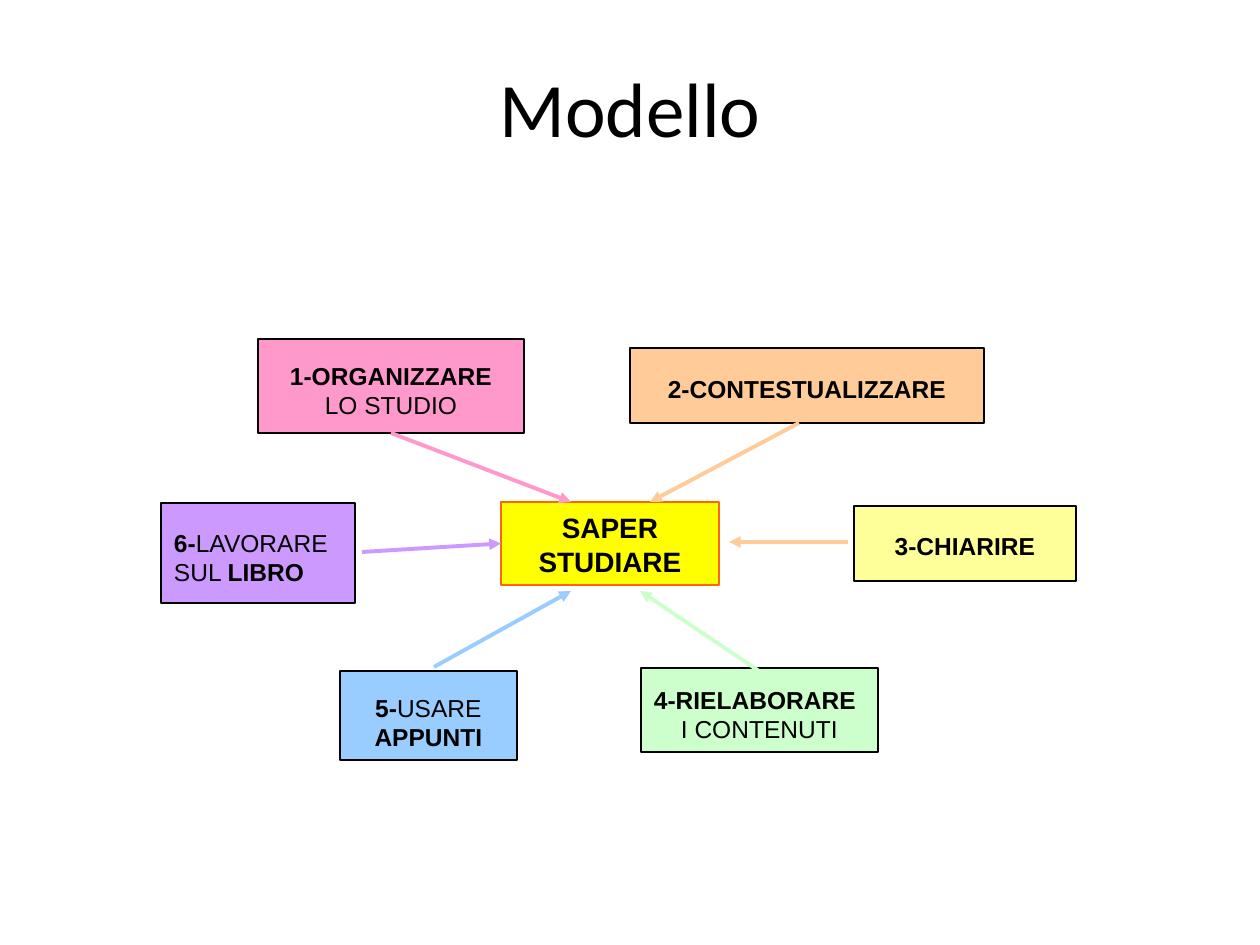
"""Build the "Modello" slide: six study skills pointing at one central goal."""
from lxml import etree
from pptx import Presentation
from pptx.dml.color import RGBColor
from pptx.enum.shapes import MSO_CONNECTOR, MSO_SHAPE
from pptx.enum.text import MSO_ANCHOR, PP_ALIGN
from pptx.oxml.ns import qn
from pptx.util import Pt

PX = 914400 // 126
STRAIGHT, RECTANGLE = MSO_CONNECTOR.STRAIGHT, MSO_SHAPE.RECTANGLE
TOP, MIDDLE = MSO_ANCHOR.TOP, MSO_ANCHOR.MIDDLE
LEFT, CENTER = PP_ALIGN.LEFT, PP_ALIGN.CENTER
BLACK = "000000"
SIDE_INSET, EDGE_INSET = 13, 6
BOTTOM_SIDE, LEFT_SIDE = 2, 1

# Each paragraph is (alignment, [(text, bold), ...]).
TITLE = [(CENTER, [("Modello", False)])]
TITLE_FRAME = (63, 38, 1134, 137)
GOAL = [(CENTER, [("SAPER", True)]), (CENTER, [("STUDIARE", True)])]
GOAL_FRAME = (501, 502, 218, 83)
SKILLS = [
    {"frame": (258, 339, 266, 94), "fill": "FF99CC", "inset": 22,
     "text": [(CENTER, [("1-ORGANIZZARE", True)]), (CENTER, [("LO STUDIO", False)])],
     "arrow": ("FF99CC", (392, 433), (571, 502))},
    {"frame": (630, 348, 354, 75), "fill": "FFCC99", "inset": 26,
     "text": [(CENTER, [("2-CONTESTUALIZZARE", True)])],
     "arrow": ("FFCC99", (799, 423), (650, 502))},
    {"frame": (854, 506, 222, 75), "fill": "FFFF99", "inset": 25,
     "text": [(CENTER, [("3-CHIARIRE", True)])],
     "arrow": ("FFCC99", (848, 542), (729, 542))},
    {"frame": (641, 668, 237, 84), "fill": "CCFFCC", "inset": 17,
     "text": [(LEFT, [("4-RIELABORARE", True)]), (CENTER, [("I CONTENUTI", False)])],
     "arrow": ("CCFFCC", (759, 671), (640, 591))},
    {"frame": (340, 671, 177, 89), "fill": "99CCFF", "inset": 22,
     "text": [(CENTER, [("5-", True), ("USARE", False)]), (CENTER, [("APPUNTI", True)])],
     "arrow": ("99CCFF", (434, 667), (571, 591))},
    {"frame": (161, 503, 194, 100), "fill": "CC99FF", "inset": 25,
     "text": [(LEFT, [("6-", True), ("LAVORARE SUL ", False), ("LIBRO", True)])],
     "arrow": ("CC99FF", (362, 552), (501, 542))},
]


def color(value):
    return RGBColor.from_string(value)


def emu(lengths):
    return [length * PX for length in lengths]


def write(frame, paragraphs, font, size, inset, anchor):
    frame.word_wrap = True
    frame.vertical_anchor = anchor
    frame.margin_left = frame.margin_right = SIDE_INSET * PX
    frame.margin_top, frame.margin_bottom = inset * PX, EDGE_INSET * PX
    for index, (alignment, runs) in enumerate(paragraphs):
        paragraph = frame.add_paragraph() if index else frame.paragraphs[0]
        paragraph.alignment = alignment
        for text, bold in runs:
            run = paragraph.add_run()
            run.text = text
            run.font.name, run.font.size, run.font.bold = font, Pt(size), bold
            run.font.color.rgb = color(BLACK)


def add_box(slide, frame, fill, outline, weight, text, size, inset):
    box = slide.shapes.add_shape(RECTANGLE, *emu(frame))
    box.shadow.inherit = False
    box.fill.solid()
    box.fill.fore_color.rgb = color(fill)
    box.line.color.rgb = color(outline)
    box.line.width = Pt(weight)
    write(box.text_frame, text, "Arial", size, inset, TOP)
    return box


def add_arrow(slide, stroke, start, end):
    arrow = slide.shapes.add_connector(STRAIGHT, *emu(start + end))
    arrow.line.color.rgb = color(stroke)
    arrow.line.width = Pt(2.25)
    etree.SubElement(arrow.line._get_or_add_ln(), qn("a:tailEnd"), type="triangle")
    etree.SubElement(arrow._element.spPr, qn("a:effectLst"))
    return arrow


def main():
    deck = Presentation()
    deck.slide_width, deck.slide_height = emu((1260, 945))
    slide = deck.slides.add_slide(deck.slide_layouts[6])
    title = slide.shapes.add_textbox(*emu(TITLE_FRAME))
    write(title.text_frame, TITLE, "Calibri", 44, EDGE_INSET, MIDDLE)

    goal = add_box(slide, GOAL_FRAME, "FFFF00", "FF6600", 1.25, GOAL, 16, 9)
    boxes = [add_box(slide, skill["frame"], skill["fill"], BLACK, 0.75,
                     skill["text"], 14, skill["inset"]) for skill in SKILLS]
    arrows = [add_arrow(slide, *skill["arrow"]) for skill in SKILLS]
    arrows[0].begin_connect(boxes[0], BOTTOM_SIDE)
    arrows[-1].end_connect(goal, LEFT_SIDE)
    deck.save("out.pptx")


if __name__ == "__main__":
    main()
